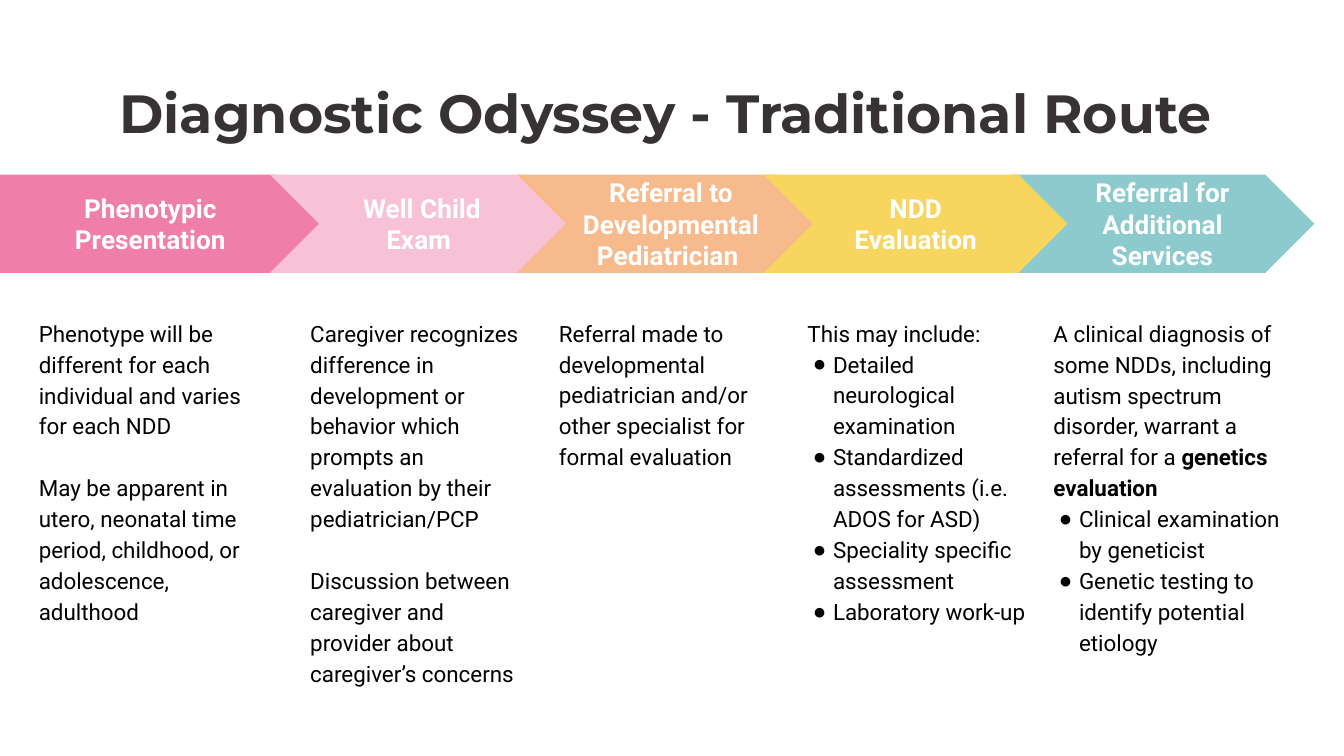
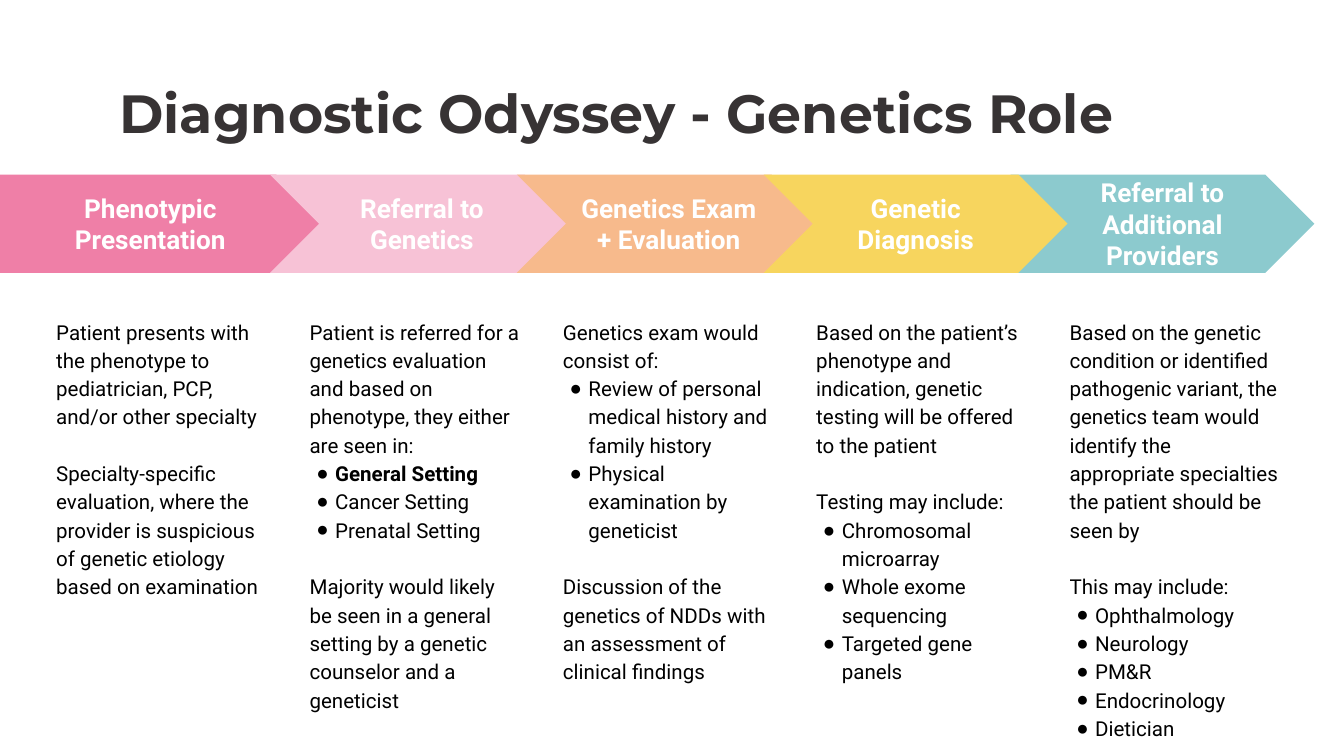
from dataclasses import dataclass

from lxml import etree
from pptx import Presentation
from pptx import util as u
from pptx.dml.color import RGBColor
from pptx.enum import shapes, text
from pptx.oxml.ns import qn
from pptx.shapes.autoshape import Shape
from pptx.slide import Slide
from pptx.text.text import TextFrame, _Paragraph


@dataclass(frozen=True)
class Theme:
    title_font: str = "Montserrat"
    body_font: str = "Roboto"
    bullet_font: str = "Arial"
    title_size: float = 28.8
    stage_size: float = 14
    title_color: str = "373334"
    body_color: str = "000000"
    background: str = "FFFFFF"
    stage_text: str = "FFFFFF"
    stage_fills: tuple[str, ...] = ("EF7FA7", "F7C2D6", "F7BA8C", "F7D55E", "8CCACE")
    line_spacing: float = 1.15
    blank_line: float = 1.38


THEME = Theme()
FIRST_CHEVRON, LAST_CHEVRON = 2.01, 7.52
CHEVRON_STEP = (LAST_CHEVRON - FIRST_CHEVRON) / 3
FIRST_DETAIL, LAST_DETAIL = 0.32, 7.86
DETAIL_STEP = (LAST_DETAIL - FIRST_DETAIL) / 4
STAGE_ORDER = (0, 1, 2, 4, 3)


@dataclass(frozen=True)
class Para:
    plain: str = ""
    strong: str = ""
    bullet: bool = False
    gap: bool = False


@dataclass(frozen=True)
class Stage:
    heading: str
    details: tuple[Para, ...]
    left: float
    width: float = 1.77
    height: float = 3.22
    arrow_width: float = 2.26


@dataclass(frozen=True)
class Route:
    title: str
    detail_size: float
    hanging: float
    stages: tuple[Stage, ...]


def bullets(*items: str) -> tuple[Para, ...]:
    return tuple(Para(item, bullet=True) for item in items)


def genetics_left(column: int) -> float:
    return FIRST_DETAIL + DETAIL_STEP * column


TRADITIONAL = Route("Diagnostic Odyssey - Traditional Route", 12, 0.15, (
    Stage("Phenotypic Presentation", (
        Para("Phenotype will be different for each individual and varies for each NDD"),
        Para("May be apparent in utero, neonatal time period, childhood, or "
             "adolescence, adulthood", gap=True),
    ), 0.19, 1.91, arrow_width=2.42),
    Stage("Well Child Exam ", (
        Para("Caregiver recognizes difference in development or behavior which "
             "prompts an evaluation by their pediatrician/PCP"),
        Para("Discussion between caregiver and provider about caregiver’s concerns", gap=True),
    ), 2.21, 1.82),
    Stage("Referral to Developmental Pediatrician ", (
        Para("Referral made to developmental pediatrician and/or other specialist "
             "for formal evaluation"),
    ), 4.06, 1.81, 2.57, arrow_width=2.29),
    Stage("NDD Evaluation", (
        Para("This may include:"),
        *bullets("Detailed neurological examination",
                 "Standardized assessments (i.e. ADOS for ASD)",
                 "Speciality specific assessment", "Laboratory work-up"),
    ), 5.91, 1.84, 2.57),
    Stage("Referral for Additional Services", (
        Para("A clinical diagnosis of some NDDs, including autism spectrum "
             "disorder, warrant a referral for a ", "genetics evaluation"),
        *bullets("Clinical examination by geneticist",
                 "Genetic testing to identify potential etiology"),
    ), 7.74, 2.03),
))

GENETICS = Route("Diagnostic Odyssey - Genetics Role", 11, 0.14, (
    Stage("Phenotypic Presentation", (
        Para("Patient presents with the phenotype to pediatrician, PCP, "
             "and/or other specialty"),
        Para("Specialty-specific evaluation, where the provider is suspicious "
             "of genetic etiology based on examination", gap=True),
    ), genetics_left(0), arrow_width=2.42),
    Stage("Referral to Genetics", (
        Para("Patient is referred for a genetics evaluation and based on "
             "phenotype, they either are seen in:"),
        Para(strong="General Setting", bullet=True),
        *bullets("Cancer Setting", "Prenatal Setting"),
        Para("Majority would likely be seen in a general setting by a genetic "
             "counselor and a geneticist", gap=True),
    ), genetics_left(1)),
    Stage("Genetics Exam + Evaluation", (
        Para("Genetics exam would consist of:"),
        *bullets("Review of personal medical history and family history",
                 "Physical examination by geneticist"),
        Para("Discussion of the genetics of NDDs with an assessment of "
             "clinical findings", gap=True),
    ), genetics_left(2)),
    Stage("Genetic Diagnosis", (
        Para("Based on the patient’s phenotype and indication, genetic testing "
             "will be offered to the patient"),
        Para("Testing may include:", gap=True),
        *bullets("Chromosomal microarray", "Whole exome sequencing", "Targeted gene panels"),
    ), genetics_left(3)),
    Stage("Referral to Additional Providers", (
        Para("Based on the genetic condition or identified pathogenic variant, "
             "the genetics team would identify the appropriate specialties the "
             "patient should be seen by"),
        Para("This may include:", gap=True),
        *bullets("Ophthalmology", "Neurology", "PM&R", "Endocrinology", "Dietician"),
    ), genetics_left(4)),
))


def add_bullet(paragraph: _Paragraph, hanging: float) -> None:
    properties = paragraph._p.get_or_add_pPr()
    properties.set("marL", str(u.Inches(0.19)))
    properties.set("indent", str(-u.Inches(hanging)))
    color = etree.SubElement(properties, qn("a:buClr"))
    etree.SubElement(color, qn("a:srgbClr"), val=THEME.body_color)
    etree.SubElement(properties, qn("a:buFont"), typeface=THEME.bullet_font)
    etree.SubElement(properties, qn("a:buChar"), char="●")


def write_text(frame: TextFrame, paras: tuple[Para, ...], *, size: float,
               font: str = THEME.body_font, color: str = THEME.body_color,
               bold: bool = False, spacing: float = 1.0, hanging: float = 0,
               align: text.PP_ALIGN = text.PP_ALIGN.LEFT,
               anchor: text.MSO_ANCHOR = text.MSO_ANCHOR.TOP) -> None:
    frame.word_wrap = True
    frame.vertical_anchor = anchor
    frame.margin_left = frame.margin_right = u.Inches(0.1)
    frame.margin_top = frame.margin_bottom = u.Inches(0.1)
    for index, para in enumerate(paras):
        paragraph = frame.add_paragraph() if index else frame.paragraphs[0]
        paragraph.alignment = align
        paragraph.line_spacing = spacing
        paragraph.space_before = u.Pt(size * THEME.blank_line if para.gap else 0)
        if para.bullet:
            add_bullet(paragraph, hanging)
        for words, heavy in ((para.plain, bold), (para.strong, True)):
            if words:
                run = paragraph.add_run()
                run.text = words
                run.font.name = font
                run.font.size = u.Pt(size)
                run.font.bold = heavy
                run.font.color.rgb = RGBColor.from_string(color)


def add_text_box(slide: Slide, left: float, top: float, width: float, height: float) -> Shape:
    return slide.shapes.add_textbox(*map(u.Inches, (left, top, width, height)))


def draw_stage(slide: Slide, index: int, stage: Stage, route: Route) -> None:
    outline = shapes.MSO_SHAPE.CHEVRON if index else shapes.MSO_SHAPE.PENTAGON
    left = FIRST_CHEVRON + CHEVRON_STEP * (index - 1) if index else 0
    arrow = slide.shapes.add_shape(
        outline, *map(u.Inches, (left, 1.3, stage.arrow_width, 0.73)))
    arrow.shadow.inherit = False
    arrow.adjustments[0] = 0.5
    arrow.fill.solid()
    arrow.fill.fore_color.rgb = RGBColor.from_string(THEME.stage_fills[index])
    arrow.line.fill.background()
    write_text(arrow.text_frame, (Para(stage.heading),), size=THEME.stage_size,
               color=THEME.stage_text, bold=True, align=text.PP_ALIGN.CENTER,
               anchor=text.MSO_ANCHOR.MIDDLE)
    details = add_text_box(slide, stage.left, 2.25, stage.width, stage.height)
    write_text(details.text_frame, stage.details, size=route.detail_size,
               spacing=THEME.line_spacing, hanging=route.hanging)


def build_slide(deck: Presentation, route: Route) -> None:
    slide = deck.slides.add_slide(deck.slide_layouts[6])
    slide.background.fill.solid()
    slide.background.fill.fore_color.rgb = RGBColor.from_string(THEME.background)
    title = add_text_box(slide, 0.79, 0.49, 8.43, 0.63)
    write_text(title.text_frame, (Para(route.title),), size=THEME.title_size,
               font=THEME.title_font, color=THEME.title_color, bold=True)
    for index in STAGE_ORDER:
        draw_stage(slide, index, route.stages[index], route)


def main() -> None:
    deck = Presentation()
    deck.slide_width = u.Inches(10)
    deck.slide_height = u.Inches(10 * 9 / 16)
    for route in (TRADITIONAL, GENETICS):
        build_slide(deck, route)
    deck.save("out.pptx")


if __name__ == "__main__":
    main()
